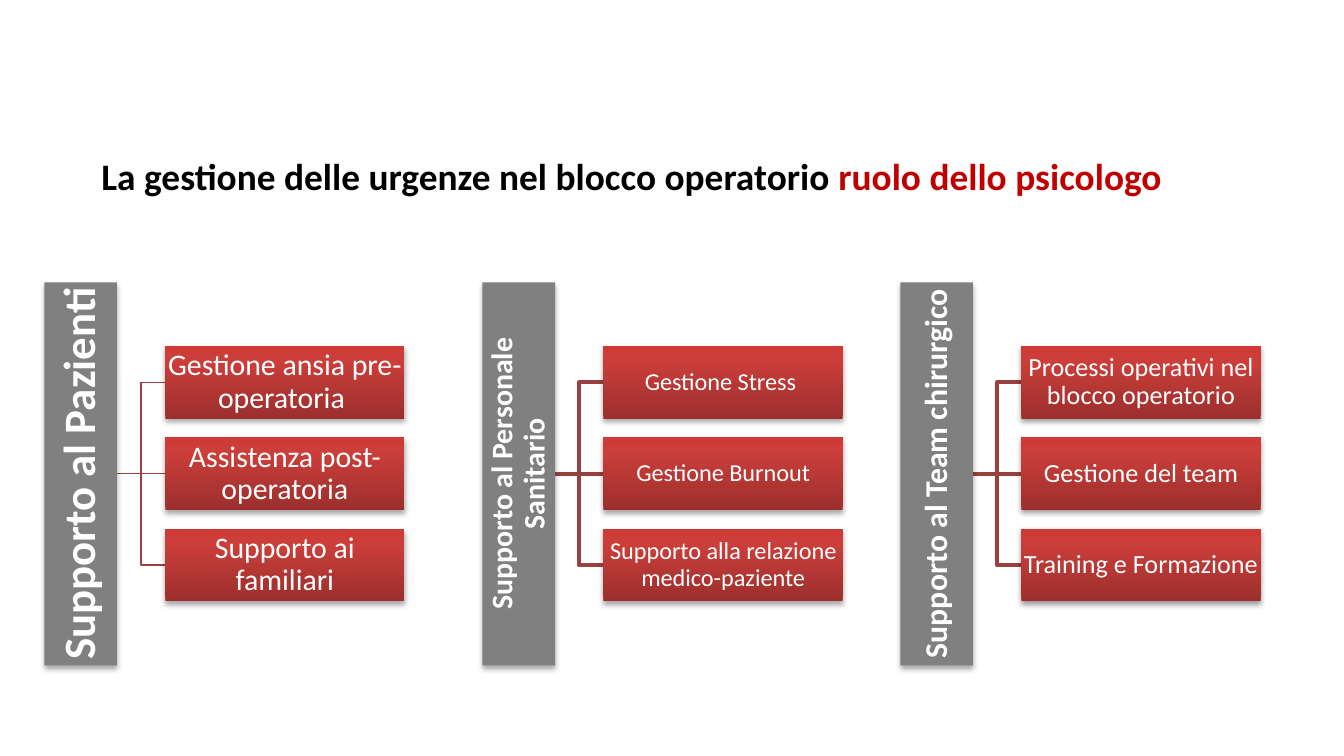
from copy import deepcopy

from lxml import etree
from pptx import Presentation
from pptx import util as u
from pptx.dml.color import RGBColor
from pptx.enum import shapes, text
from pptx.oxml import ns

SLIDE_WIDTH = 10
SLIDE_HEIGHT = SLIDE_WIDTH * 9 / 16
BAR_WIDTH, BAR_HEIGHT = 0.54, 2.85
BOX_LEFT, BOX_WIDTH, BOX_HEIGHT = 0.9, 1.78, 0.54
BOX_PITCH = 0.68
GRADIENT = [(0, "9C2F2D"), (0.8, "CB3E3A"), (1, "CE3B37")]
LINE_COLOR = "9A403E"

BRANCHES = [
    dict(left=3.59, top=2.1, heading="Supporto al Personale Sanitario", heading_size=16,
         items=["Gestione Stress ", "Gestione Burnout",
                "Supporto alla relazione medico-paziente"],
         item_size=13, line_width=2),
    dict(left=0.33, top=2.1, heading="Supporto al Pazienti ", heading_size=24,
         items=["Gestione ansia pre-operatoria ", "Assistenza post-operatoria",
                "Supporto ai familiari"],
         item_size=16, line_width=0.75, heading_inset=0.02),
    dict(left=6.7, top=2.1, heading="Supporto al Team chirurgico", heading_size=17,
         items=["Processi operativi nel blocco operatorio", "Gestione del team",
                "Training e Formazione"],
         item_size=14, line_width=2, shadow_alpha=38, shadow_distance=1.6),
]


def color(value):
    return RGBColor.from_string(value)


def add_text(paragraph, content, size, fill="FFFFFF", bold=False):
    run = paragraph.add_run()
    run.text = content
    run.font.name = "Calibri"
    run.font.size = u.Pt(size)
    run.font.bold = bold
    run.font.color.rgb = color(fill)
    paragraph.alignment = text.PP_ALIGN.CENTER


def prepare_frame(frame, inset):
    frame.word_wrap = True
    frame.vertical_anchor = text.MSO_ANCHOR.MIDDLE
    frame.margin_left = frame.margin_right = u.Inches(inset)
    frame.margin_top = frame.margin_bottom = u.Inches(inset)


def add_shadow(shape, alpha, distance):
    shape.shadow.inherit = False
    effects = shape._element.spPr.find(ns.qn("a:effectLst"))
    shadow = etree.SubElement(effects, ns.qn("a:outerShdw"), blurRad=str(u.Pt(3.1)),
                              dist=str(u.Pt(distance)), dir="5400000", rotWithShape="0")
    shade = etree.SubElement(shadow, ns.qn("a:srgbClr"), val="000000")
    etree.SubElement(shade, ns.qn("a:alpha"), val=str(alpha * 1000))


def fill_gradient(shape):
    shape.fill.gradient()
    shape.fill.gradient_angle = 90
    stops = shape._element.spPr.find(".//" + ns.qn("a:gsLst"))
    stops.append(deepcopy(stops[-1]))
    for stop, (position, value) in zip(shape.fill.gradient_stops, GRADIENT):
        stop.position = position
        stop.color.rgb = color(value)


def add_panel(slide, left, top, width, height, content, size, alpha, distance,
              bold=False, inset=0.01):
    shape = slide.shapes.add_shape(shapes.MSO_SHAPE.RECTANGLE, u.Inches(left),
                                   u.Inches(top), u.Inches(width), u.Inches(height))
    shape.line.fill.background()
    add_shadow(shape, alpha, distance)
    prepare_frame(shape.text_frame, inset)
    paragraph = shape.text_frame.paragraphs[0]
    paragraph.line_spacing = 0.9
    add_text(paragraph, content, size, bold=bold)
    return shape


def add_link(slide, start_x, start_y, end_x, end_y, width):
    if start_y == end_y:
        link = slide.shapes.add_connector(
            shapes.MSO_CONNECTOR.STRAIGHT, u.Inches(start_x), u.Inches(start_y),
            u.Inches(end_x), u.Inches(end_y))
        etree.SubElement(link._element.spPr, ns.qn("a:effectLst"))
    else:
        middle = (start_x + end_x) / 2
        builder = slide.shapes.build_freeform(u.Inches(start_x), u.Inches(start_y))
        builder.add_line_segments(
            [(u.Inches(x), u.Inches(y)) for x, y in
             [(middle, start_y), (middle, end_y), (end_x, end_y)]], close=False)
        link = builder.convert_to_shape()
        link.fill.background()
        link.shadow.inherit = False
    link.line.color.rgb = color(LINE_COLOR)
    link.line.width = u.Pt(width)


def add_branch(slide, left, top, heading, heading_size, items, item_size, line_width,
               heading_inset=0.01, shadow_alpha=35, shadow_distance=1.8):
    center_y = top + BAR_HEIGHT / 2
    box_left = left + BOX_LEFT
    centers = [center_y + (index - 1) * BOX_PITCH for index in range(len(items))]
    for box_center in reversed(centers):
        add_link(slide, left + BAR_WIDTH, center_y, box_left, box_center, line_width)

    bar = add_panel(slide, left + (BAR_WIDTH - BAR_HEIGHT) / 2, center_y - BAR_WIDTH / 2,
                    BAR_HEIGHT, BAR_WIDTH, heading, heading_size, 35, 1.8,
                    bold=True, inset=heading_inset)
    bar.rotation = 270
    bar.fill.solid()
    bar.fill.fore_color.rgb = color("808080")

    for box_center, item in zip(centers, items):
        box = add_panel(slide, box_left, box_center - BOX_HEIGHT / 2, BOX_WIDTH, BOX_HEIGHT,
                        item, item_size, shadow_alpha, shadow_distance)
        fill_gradient(box)


def add_title(slide, left, top, width, height):
    box = slide.shapes.add_textbox(u.Inches(left), u.Inches(top),
                                   u.Inches(width), u.Inches(height))
    prepare_frame(box.text_frame, 0.05)
    paragraph = box.text_frame.paragraphs[0]
    add_text(paragraph, "La gestione delle urgenze nel blocco operatorio ", 20,
             fill="000000", bold=True)
    add_text(paragraph, "ruolo dello psicologo", 20, fill="C00000", bold=True)
    paragraph.add_line_break()
    paragraph.font.size = u.Pt(20)


def main():
    presentation = Presentation()
    presentation.slide_width = u.Inches(SLIDE_WIDTH)
    presentation.slide_height = u.Inches(SLIDE_HEIGHT)
    slide = presentation.slides.add_slide(presentation.slide_layouts[6])
    add_title(slide, 0.2, 1, 9, 0.94)
    for branch in BRANCHES:
        add_branch(slide, **branch)
    presentation.save("out.pptx")


if __name__ == "__main__":
    main()
